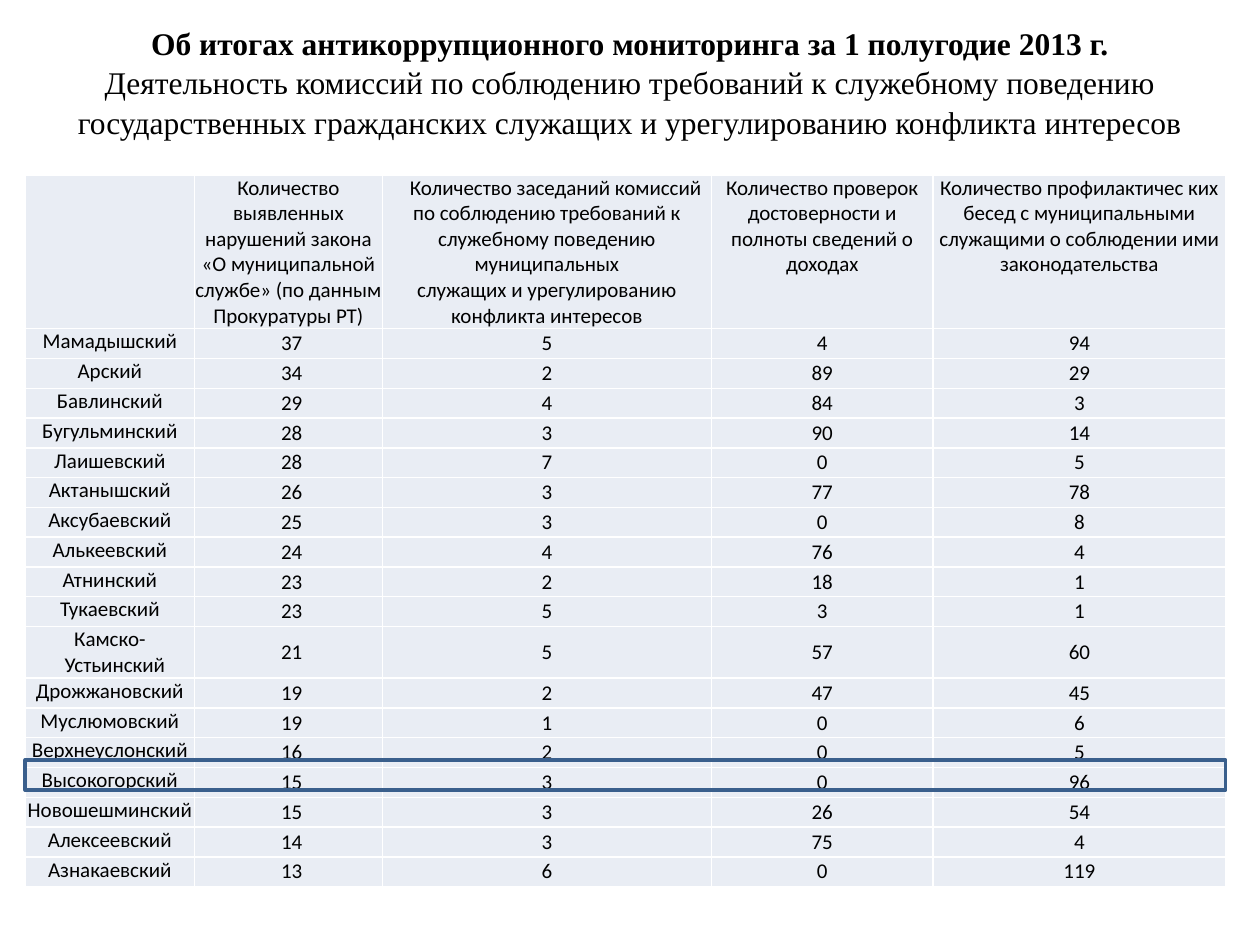
from lxml import etree
from pptx import Presentation
from pptx.dml.color import RGBColor
from pptx.enum import shapes, text
from pptx.oxml import ns
from pptx.util import Cm, Pt

COLORS = {"text": "000000", "cell": "E9EDF4", "border": "FFFFFF", "frame": "3A5F8C"}

TITLE = [
    ("Об итогах антикоррупционного мониторинга за 1 полугодие 2013 г. ", True),
    ("Деятельность комиссий по соблюдению требований к служебному поведению "
     "государственных гражданских служащих и урегулированию конфликта интересов", False),
]

HEADERS = [
    [],
    ["Количество выявленных нарушений закона «О муниципальной службе» "
     "(по данным Прокуратуры РТ)"],
    ["Количество заседаний комиссий по соблюдению требований к служебному "
     "поведению муниципальных",
     "служащих и урегулированию конфликта интересов"],
    ["Количество проверок достоверности и полноты сведений о доходах"],
    ["Количество профилактичес ких бесед с муниципальными служащими "
     "о соблюдении ими законодательства"],
]

DISTRICTS = [
    ("Мамадышский", 37, 5, 4, 94),
    ("Арский", 34, 2, 89, 29),
    ("Бавлинский", 29, 4, 84, 3),
    ("Бугульминский", 28, 3, 90, 14),
    ("Лаишевский", 28, 7, 0, 5),
    ("Актанышский", 26, 3, 77, 78),
    ("Аксубаевский", 25, 3, 0, 8),
    ("Алькеевский", 24, 4, 76, 4),
    ("Атнинский", 23, 2, 18, 1),
    ("Тукаевский", 23, 5, 3, 1),
    ("Камско-Устьинский", 21, 5, 57, 60),
    ("Дрожжановский", 19, 2, 47, 45),
    ("Муслюмовский", 19, 1, 0, 6),
    ("Верхнеуслонский", 16, 2, 0, 5),
    ("Высокогорский", 15, 3, 0, 96),
    ("Новошешминский", 15, 3, 26, 54),
    ("Алексеевский", 14, 3, 75, 4),
    ("Азнакаевский", 13, 6, 0, 119),
]

COL_WIDTHS = [3.41, 3.79, 6.63, 4.47, 5.9]
COL_MARGINS = [0.2, 1.37, 0, 1.12, 1.19]
HANGING = -1.24
HEADER_HEIGHT, ROW_HEIGHT, TWO_LINE_HEIGHT = 3.09, 0.6, 1.04


def rgb(name):
    return RGBColor.from_string(COLORS[name])


def add_title(s, left, top, width, height):
    sp = s.shapes.title
    sp.left, sp.top, sp.width, sp.height = Cm(left), Cm(top), Cm(width), Cm(height)
    tf = sp.text_frame
    tf.word_wrap = True
    tf.auto_size = text.MSO_AUTO_SIZE.NONE
    tf.vertical_anchor = text.MSO_ANCHOR.MIDDLE
    tf.margin_top, tf.margin_bottom = 0, Cm(1.42)
    p = tf.paragraphs[0]
    p.alignment = text.PP_ALIGN.CENTER
    p.line_spacing = 1.05
    p.font.name, p.font.size = "Times New Roman", Pt(18)
    p.font.color.rgb = rgb("text")
    for words, bold in TITLE:
        r = p.add_run()
        r.text, r.font.bold = words, bold


def add_borders(cell):
    """Put a white line on each side; borders come before the fill in tcPr."""
    tc_pr = cell._tc.get_or_add_tcPr()
    for i, side in enumerate(("lnL", "lnR", "lnT", "lnB")):
        ln = etree.Element(ns.qn(f"a:{side}"), w=str(Pt(1)))
        fill = etree.SubElement(ln, ns.qn("a:solidFill"))
        etree.SubElement(fill, ns.qn("a:srgbClr"), val=COLORS["border"])
        tc_pr.insert(i, ln)


def fill_cell(cell, lines, indents, anchor, spacing=None):
    """Write one paragraph per line; indents holds (margin, first line) in cm."""
    cell.fill.solid()
    cell.fill.fore_color.rgb = rgb("cell")
    add_borders(cell)
    cell.margin_left = cell.margin_right = cell.margin_top = cell.margin_bottom = 0
    cell.vertical_anchor = anchor
    tf = cell.text_frame
    tf.text = "\n".join(lines)
    for p, (margin, first) in zip(tf.paragraphs, indents):
        p.alignment = text.PP_ALIGN.CENTER
        p.line_spacing = spacing
        p.font.name, p.font.size = "Calibri", Pt(12)
        p.font.color.rgb = rgb("text")
        p_pr = p._p.get_or_add_pPr()
        p_pr.set("marL", str(Cm(margin)))
        p_pr.set("indent", str(Cm(first)))


def add_district_table(s, left, top):
    heights = [HEADER_HEIGHT] + [
        TWO_LINE_HEIGHT if "-" in row[0] else ROW_HEIGHT for row in DISTRICTS]
    frame = s.shapes.add_table(len(heights), len(COL_WIDTHS), Cm(left), Cm(top),
                               Cm(sum(COL_WIDTHS)), Cm(sum(heights)))
    table = frame.table
    table.first_row = table.horz_banding = False
    for column, width in zip(table.columns, COL_WIDTHS):
        column.width = Cm(width)
    for row, height in zip(table.rows, heights):
        row.height = Cm(height)

    for c, lines in enumerate(HEADERS):
        indents = [(0, 0.36 if len(lines) > 1 else HANGING), (0, HANGING)]
        fill_cell(table.cell(0, c), lines, indents, text.MSO_ANCHOR.TOP)
    for r, values in enumerate(DISTRICTS, start=1):
        for c, value in enumerate(values):
            anchor = text.MSO_ANCHOR.MIDDLE if c else text.MSO_ANCHOR.TOP
            fill_cell(table.cell(r, c), [str(value)], [(COL_MARGINS[c], HANGING)],
                      anchor, Pt(14.8))


def add_highlight(s, left, top, width, height):
    sp = s.shapes.add_shape(shapes.MSO_SHAPE.RECTANGLE,
                            Cm(left), Cm(top), Cm(width), Cm(height))
    sp.shadow.inherit = False
    sp.fill.background()
    sp.line.color.rgb = rgb("frame")
    sp.line.width = Pt(2)


def main():
    prs = Presentation()
    prs.slide_width, prs.slide_height = Cm(25.4), Cm(19.05)
    s = prs.slides.add_slide(prs.slide_layouts[5])
    add_title(s, 1.27, 0.76, 22.86, 3.18)
    add_district_table(s, 0.51, 3.53)
    add_highlight(s, 0.51, 15.32, sum(COL_WIDTHS), 0.61)
    prs.save("out.pptx")


if __name__ == "__main__":
    main()
